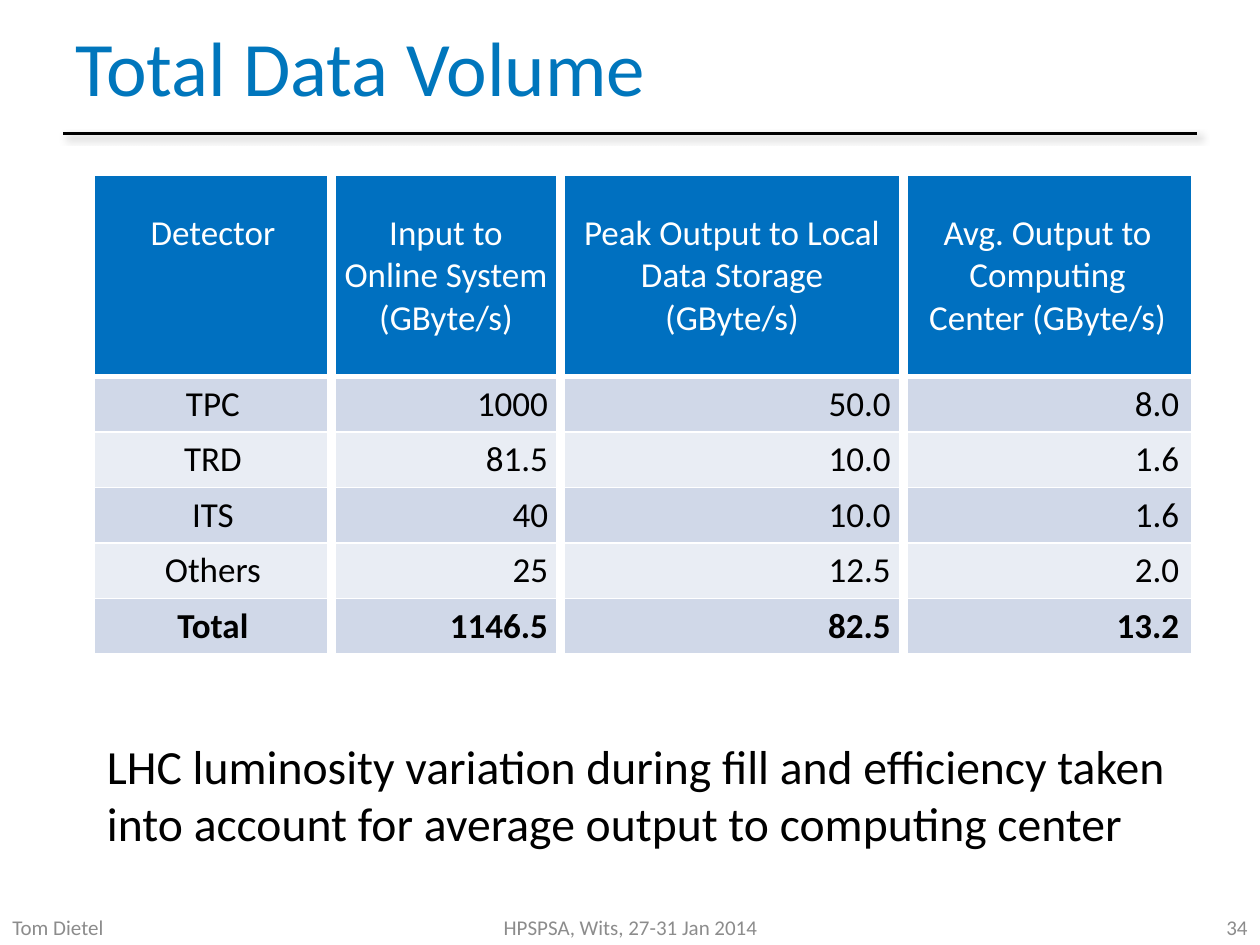
import pptx
import pptx.dml.color
import pptx.enum.shapes
import pptx.enum.text
import pptx.oxml
import pptx.oxml.ns
import pptx.util
from pptx.util import Inches

COLORS = {
    "title": "0076BC", "footer": "8C8C8C", "text": "000000", "white": "FFFFFF",
    "header": "0070C0", "odd": "D0D8E8", "even": "E9EDF4",
}
ALIGN = pptx.enum.text.PP_ALIGN
ANCHOR = pptx.enum.text.MSO_ANCHOR
HEADERS = [
    "Detector", "Input to Online System (GByte/s)",
    "Peak Output to Local Data Storage (GByte/s)",
    "Avg. Output to Computing\vCenter (GByte/s)",
]
ROWS = [
    ["TPC", "1000", "50.0", "8.0"],
    ["TRD", "81.5", "10.0", "1.6"],
    ["ITS", "40", "10.0", "1.6"],
    ["Others", "25", "12.5", "2.0"],
    ["Total", "1146.5", "82.5", "13.2"],
]
WIDTHS = [1.88, 1.82, 2.72, 2.29]
FOOTERS = [
    ("HPSPSA, Wits, 27-31 Jan 2014", 1.82, 6.37, ALIGN.CENTER),
    ("Tom Dietel", 0, 1.7, ALIGN.LEFT),
    ("34", 8.55, 1.45, ALIGN.RIGHT),
]


def rgb(name):
    """Return the named colour."""
    return pptx.dml.color.RGBColor.from_string(COLORS[name])


class Painter:
    """Hold the text style and the current page."""

    def __init__(self, page, font="Calibri"):
        """Start painting on a page."""
        self.page = page
        self.font = font

    def fill_para(self, para, text, size, color, align=ALIGN.LEFT, bold=False):
        """Fill a paragraph with styled text."""
        para.text = text
        para.alignment = align
        style = {"name": self.font, "size": pptx.util.Pt(size), "bold": bold}
        for span in para.runs:
            for key, value in style.items():
                setattr(span.font, key, value)
            span.font.color.rgb = rgb(color)

    def text(self, text, left, top, width, height, size, color,
             align=ALIGN.LEFT, anchor=ANCHOR.MIDDLE):
        """Add a wrapped text box."""
        box = self.page.shapes.add_textbox(
            Inches(left), Inches(top), Inches(width), Inches(height))
        box.text_frame.word_wrap = True
        box.text_frame.vertical_anchor = anchor
        self.fill_para(box.text_frame.paragraphs[0], text, size, color, align)

    def rule(self, left, right, top):
        """Add a horizontal line with a soft shadow."""
        line = self.page.shapes.add_connector(
            pptx.enum.shapes.MSO_CONNECTOR.STRAIGHT,
            Inches(left), Inches(top), Inches(right), Inches(top))
        line.line.color.rgb = rgb("text")
        line.line.width = pptx.util.Pt(1.5)
        line._element.spPr.append(pptx.oxml.parse_xml(
            f'<a:effectLst {pptx.oxml.ns.nsdecls("a")}>'
            '<a:outerShdw blurRad="50800" dist="38100" dir="2700000">'
            f'<a:srgbClr val="{COLORS["text"]}"><a:alpha val="40000"/></a:srgbClr>'
            '</a:outerShdw></a:effectLst>'))

    def borders(self, cell, widths):
        """Draw white cell borders, given as points for each side."""
        properties = cell._tc.get_or_add_tcPr()
        for index, (side, points) in enumerate(widths.items()):
            properties.insert(index, pptx.oxml.parse_xml(
                f'<a:ln{side} {pptx.oxml.ns.nsdecls("a")} w="{points * 12700}">'
                f'<a:solidFill><a:srgbClr val="{COLORS["white"]}"/></a:solidFill>'
                f'</a:ln{side}>'))

    def table(self, left, top, widths, heights, rows):
        """Add a banded table with a header row and a bold total row."""
        table = self.page.shapes.add_table(
            len(rows), len(widths), Inches(left), Inches(top),
            Inches(sum(widths)), Inches(sum(heights))).table
        for column, width in zip(table.columns, widths):
            column.width = Inches(width)
        for row, height in zip(table.rows, heights):
            row.height = Inches(height)
        last_row, last_column = len(rows) - 1, len(widths) - 1
        for r, values in enumerate(rows):
            for c, value in enumerate(values):
                cell = table.cell(r, c)
                cell.fill.solid()
                cell.fill.fore_color.rgb = rgb(
                    "header" if r == 0 else "odd" if r % 2 else "even")
                cell.vertical_anchor = ANCHOR.MIDDLE if r == 0 else ANCHOR.TOP
                self.fill_para(cell.text_frame.paragraphs[0], value, 20,
                               "text" if r else "white",
                               ALIGN.RIGHT if r and c else ALIGN.CENTER,
                               r == last_row)
                self.borders(cell, {
                    "L": 6 if c else 1, "R": 6 if c < last_column else 1,
                    "T": 3 if r == 1 else 1, "B": 1 if r else 3})
        table.cell(0, 0).margin_bottom = Inches(0.73)


def main():
    """Build the page and save the deck."""
    deck = pptx.Presentation()
    deck.slide_width, deck.slide_height = Inches(10), Inches(7.5)
    painter = Painter(deck.slides.add_slide(deck.slide_layouts[6]))
    painter.rule(0.5, 9.5, 1.06)
    painter.text("Total Data Volume", 0.5, 0, 9, 1.05, 44, "title")
    for text, left, width, align in FOOTERS:
        painter.text(text, left, 7.22, width, 0.28, 12, "footer", align)
    painter.text(
        "LHC luminosity variation during fill and efficiency taken into account "
        "for average output to computing center",
        0.75, 5.8, 8.7, 1.18, 27.2, "text", anchor=ANCHOR.TOP)
    painter.table(0.75, 1.39, WIDTHS, [1.6] + [0.44] * len(ROWS), [HEADERS] + ROWS)
    deck.save("out.pptx")


if __name__ == "__main__":
    main()
